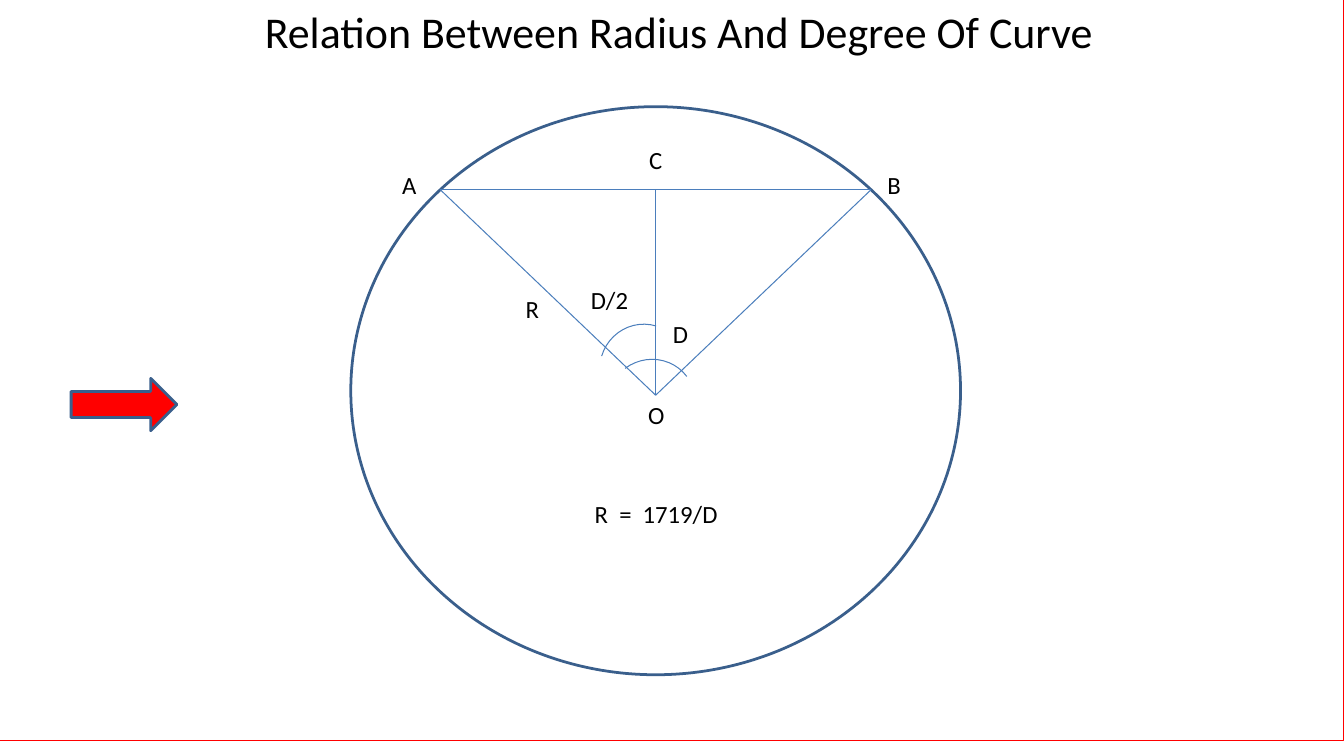
from lxml.etree import SubElement
from pptx import Presentation
from pptx.dml.color import RGBColor
from pptx.enum.shapes import MSO_CONNECTOR, MSO_SHAPE
from pptx.enum.text import MSO_ANCHOR, PP_ALIGN
from pptx.oxml.ns import qn
from pptx.util import Inches, Pt

COLORS = {
    "paper": "FFFFFF",
    "text": "000000",
    "red": "FF0000",
    "outline": "3A5F8C",
    "thin": "4B7EBC",
}
FONT = "Calibri"
SLIDE_W, SLIDE_H = 13.6, 7.5
LABEL_H = 0.4


def rgb(name):
    return RGBColor.from_string(COLORS[name])


def set_line(sp, color, width):
    sp.line.color.rgb = rgb(color)
    sp.line.width = Pt(width)


def add_outline(slide, kind, box, line, width, fill=None, rotation=0):
    sp = slide.shapes.add_shape(kind, *map(Inches, box))
    sp.shadow.inherit = False
    sp.rotation = rotation
    if fill:
        sp.fill.solid()
        sp.fill.fore_color.rgb = rgb(fill)
    else:
        sp.fill.background()
    set_line(sp, line, width)
    return sp


def add_segment(slide, start, end):
    line = slide.shapes.add_connector(
        MSO_CONNECTOR.STRAIGHT, *map(Inches, start + end))
    set_line(line, "thin", 0.75)
    SubElement(line._element.spPr, qn("a:effectLst"))


def write(tf, text, size):
    tf.text = text
    p = tf.paragraphs[0]
    p.alignment = PP_ALIGN.LEFT
    font = p.runs[0].font
    font.name = FONT
    font.size = Pt(size)
    font.color.rgb = rgb("text")


def add_label(slide, text, x, y, w, wrap):
    sp = slide.shapes.add_textbox(*map(Inches, (x, y, w, LABEL_H)))
    write(sp.text_frame, text, 18)
    sp.text_frame.word_wrap = wrap


def add_framed_title(slide, box, text):
    sp = add_outline(slide, MSO_SHAPE.RECTANGLE, box, "red", 0.75)
    tf = sp.text_frame
    tf.word_wrap = True
    tf.vertical_anchor = MSO_ANCHOR.TOP
    tf.margin_left = Inches(2.68)
    write(tf, text, 32)


def add_curve_diagram(slide, box):
    x, y, w, h = box
    center = (x + w / 2, y + 2.92)
    chord_y = y + 0.84
    half_chord = 2.18
    a = (center[0] - half_chord, chord_y)
    b = (center[0] + half_chord, chord_y)
    c = (center[0], chord_y)

    add_outline(slide, MSO_SHAPE.OVAL, box, "outline", 2, "paper")
    for start, end in ((c, center), (a, b), (a, center), (center, b)):
        add_segment(slide, start, end)

    for dx, dy, rotation in ((2.51, 2.21, 286.7), (2.59, 2.56, 323.1)):
        add_outline(slide, MSO_SHAPE.ARC, (x + dx, y + dy, 0.9, 0.88),
                    "thin", 0.75, rotation=rotation)

    labels = (
        ("A", 0.42, 0.59, 0.35, False),
        ("B", 5.33, 0.59, 0.51, True),
        ("O", 2.91, 2.92, 0.51, True),
        ("C", 2.92, 0.34, 0.34, False),
        ("D", 3.16, 2.1, 0.51, True),
        ("D/2", 2.33, 1.75, 0.92, True),
        ("R", 1.67, 1.85, 0.34, False),
        ("R  =  1719/D", 2.37, 3.92, 1.46, False),
    )
    for text, dx, dy, width, wrap in labels:
        add_label(slide, text, x + dx, y + dy, width, wrap)


def main():
    prs = Presentation()
    prs.slide_width = Inches(SLIDE_W)
    prs.slide_height = Inches(SLIDE_H)
    slide = prs.slides.add_slide(prs.slide_layouts[6])
    add_framed_title(slide, (0, 0, SLIDE_W, SLIDE_H),
                     "Relation Between Radius And Degree Of Curve")
    add_curve_diagram(slide, (3.55, 1.08, 6.17, 5.75))
    add_outline(slide, MSO_SHAPE.RIGHT_ARROW, (0.72, 3.83, 1.07, 0.53),
                "outline", 2, "red")
    prs.save("out.pptx")


if __name__ == "__main__":
    main()
